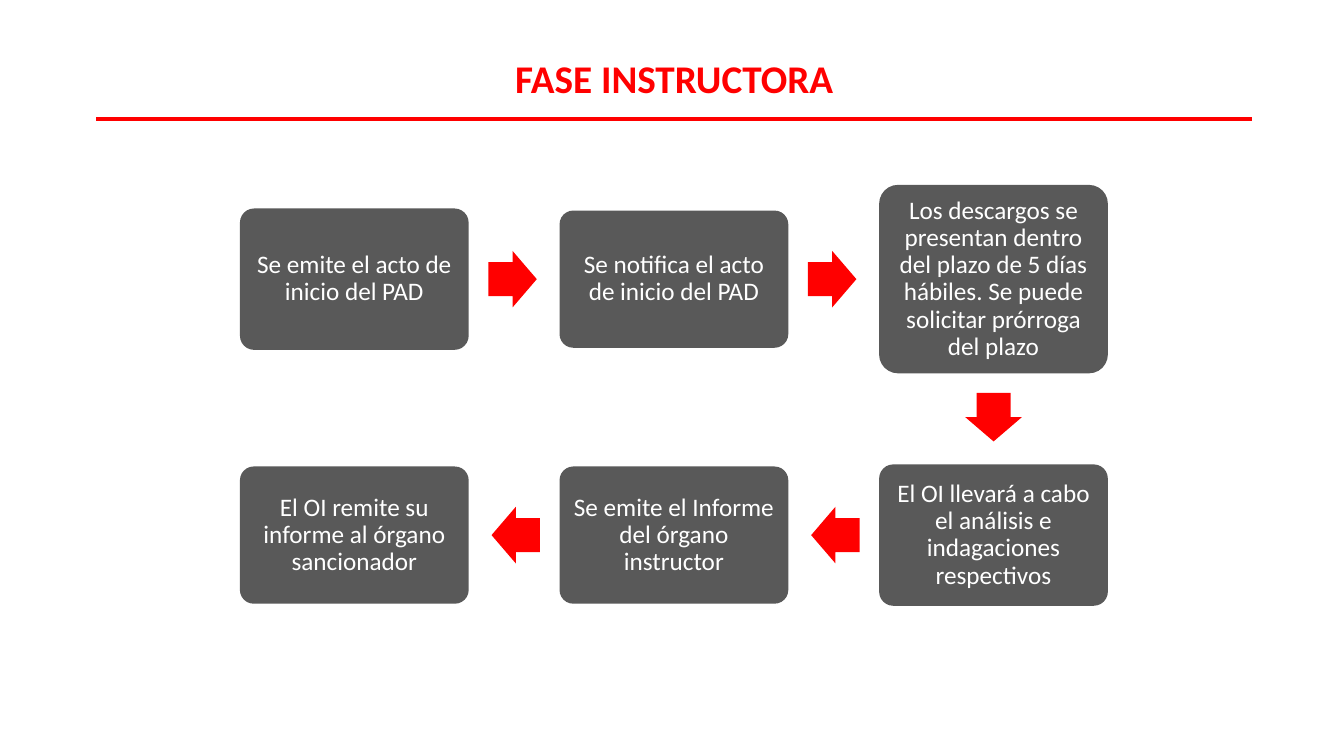
from dataclasses import dataclass

from pptx import Presentation
from pptx.dml.color import RGBColor
from pptx.enum import shapes, text
from pptx.oxml import ns, xmlchemy
from pptx.util import Pt


@dataclass(frozen=True)
class Theme:
    """Colours, font and type sizes of the slide."""
    accent: RGBColor = RGBColor(0xFF, 0x00, 0x00)
    card: RGBColor = RGBColor(0x59, 0x59, 0x59)
    card_text: RGBColor = RGBColor(0xFF, 0xFF, 0xFF)
    font: str = "Calibri"
    title_size: int = 28
    card_size: int = 18


@dataclass(frozen=True)
class Box:
    """A rectangle in points."""
    left: float
    top: float
    width: float
    height: float

    def lengths(self):
        """Return the four lengths for a new shape."""
        return [Pt(value) for value in (self.left, self.top, self.width, self.height)]


THEME = Theme()
COLUMNS = 3
CARD_WIDTH = 163.4
ARROW_LENGTH, ARROW_BREADTH, ARROW_GAP = 34.6, 40.4, 14
ROW_CENTRES = (67, 249.8)
STEPS = [
    ("Se emite el acto de inicio del PAD", 101),
    ("Se notifica el acto de inicio del PAD", 98),
    ("Los descargos se presentan dentro del plazo de 5 días hábiles. "
     "Se puede solicitar prórroga del plazo", 134.6),
    ("El OI llevará a cabo el análisis e indagaciones respectivos", 101),
    ("Se emite el Informe del órgano instructor", 98),
    ("El OI remite su informe al órgano sancionador", 98),
]


def write(frame, words, size, colour, bold=False):
    """Write one centred paragraph into a text frame."""
    frame.word_wrap = True
    para = frame.paragraphs[0]
    para.alignment = text.PP_ALIGN.CENTER
    span = para.add_run()
    span.text = words
    span.font.name = THEME.font
    span.font.size = Pt(size)
    span.font.bold = bold
    span.font.color.rgb = colour
    return para


def add_block(page, kind, box, colour, adjustments):
    """Add a flat preset shape without an outline."""
    shape = page.shapes.add_shape(kind, *box.lengths())
    shape.shadow.inherit = False
    shape.fill.solid()
    shape.fill.fore_color.rgb = colour
    shape.line.fill.background()
    for index, value in enumerate(adjustments):
        shape.adjustments[index] = value
    return shape


def add_title(page, box):
    """Place the title at the top of the box and a rule along its bottom."""
    label = page.shapes.add_textbox(*Box(box.left, box.top, box.width, 41).lengths())
    write(label.text_frame, "FASE INSTRUCTORA", THEME.title_size, THEME.accent, bold=True)
    bottom = Pt(box.top + box.height)
    rule = page.shapes.add_connector(
        shapes.MSO_CONNECTOR.STRAIGHT, Pt(box.left), bottom, Pt(box.left + box.width), bottom)
    rule.line.color.rgb = THEME.accent
    rule.line.width = Pt(2.25)
    rule._element.spPr.append(xmlchemy.OxmlElement("a:effectLst"))


def add_card(page, box, words):
    """Add a rounded card with a step of the process."""
    card = add_block(page, shapes.MSO_SHAPE.ROUNDED_RECTANGLE, box, THEME.card, [0.1])
    frame = card.text_frame
    frame.margin_left = frame.margin_right = frame.margin_top = frame.margin_bottom = Pt(5)
    frame.vertical_anchor = text.MSO_ANCHOR.MIDDLE
    para = write(frame, words, THEME.card_size, THEME.card_text)
    para.line_spacing = 0.9


def add_arrow(page, source, direction):
    """Add an arrow that leaves the source box in the given direction."""
    across, down = direction
    reach = ARROW_GAP + ARROW_LENGTH / 2
    centre_x = source.left + source.width / 2 + across * (source.width / 2 + reach)
    centre_y = source.top + source.height / 2 + down * (source.height / 2 + reach)
    box = Box(centre_x - ARROW_LENGTH / 2, centre_y - ARROW_BREADTH / 2,
              ARROW_LENGTH, ARROW_BREADTH)
    arrow = add_block(page, shapes.MSO_SHAPE.RIGHT_ARROW, box, THEME.accent, [0.6, 0.5])
    arrow.rotation = {(1, 0): 0, (0, 1): 90, (-1, 0): 180}[direction]


def add_flow(page, box):
    """Lay the steps out in two rows, the second running back to the left."""
    pitch = (box.width - CARD_WIDTH) / (COLUMNS - 1)
    cells = []
    for index in range(len(STEPS)):
        row, column = divmod(index, COLUMNS)
        cells.append((COLUMNS - 1 - column if row % 2 else column, row))
    for index, (words, height) in enumerate(STEPS):
        column, row = cells[index]
        card = Box(box.left + column * pitch, box.top + ROW_CENTRES[row] - height / 2,
                   CARD_WIDTH, height)
        add_card(page, card, words)
        if index + 1 < len(STEPS):
            next_column, next_row = cells[index + 1]
            add_arrow(page, card, (next_column - column, next_row - row))


def main():
    """Build the slide and save it."""
    deck = Presentation()
    deck.slide_width, deck.slide_height = Pt(960), Pt(540)
    page = deck.slides.add_slide(deck.slide_layouts[6])
    add_title(page, Box(68.6, 35.3, 825.8, 49.7))
    add_flow(page, Box(171.4, 132.4, 620, 300))
    deck.save("out.pptx")


if __name__ == "__main__":
    main()
